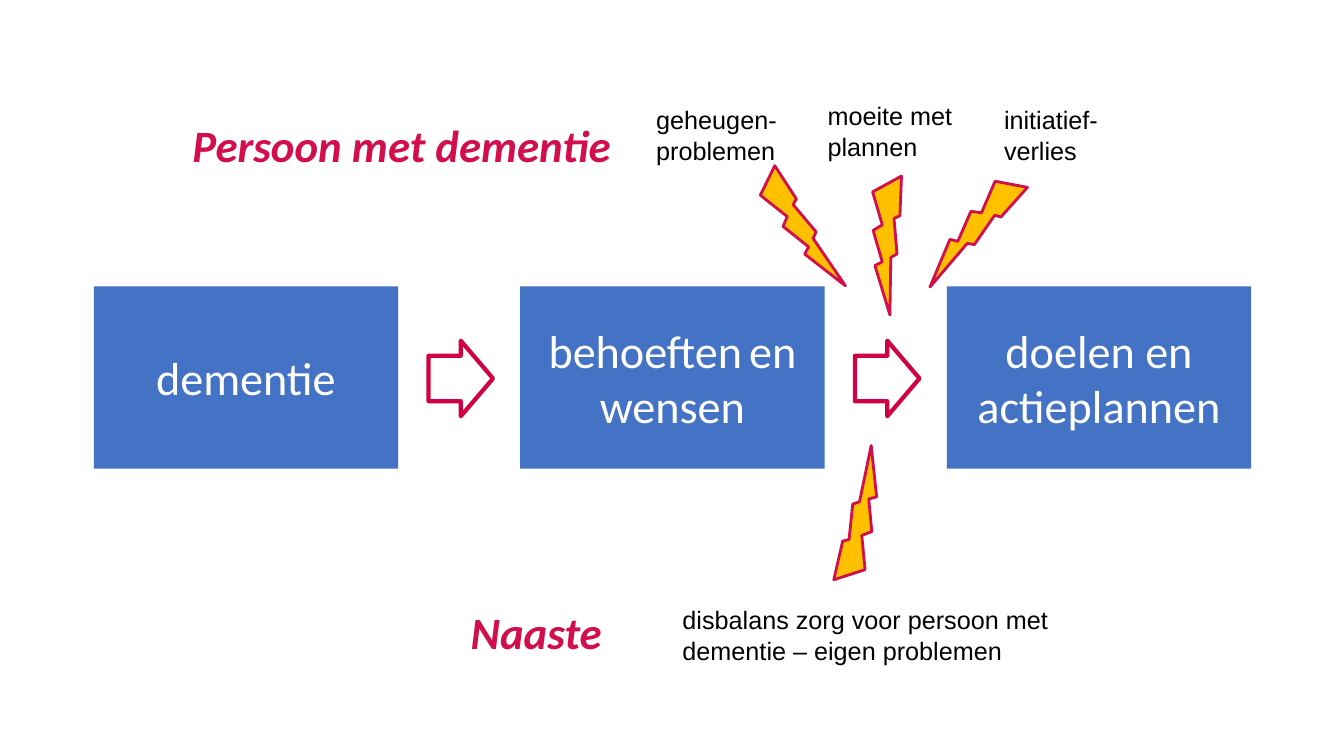
from dataclasses import dataclass

from pptx import Presentation
from pptx.dml.color import RGBColor
from pptx.enum.shapes import MSO_SHAPE
from pptx.enum.text import MSO_ANCHOR, MSO_AUTO_SIZE, PP_ALIGN
from pptx.util import Inches, Pt

RECT, ARROW, BOLT = MSO_SHAPE.RECTANGLE, MSO_SHAPE.RIGHT_ARROW, MSO_SHAPE.LIGHTNING_BOLT
MIDDLE, CENTER, GROW = MSO_ANCHOR.MIDDLE, PP_ALIGN.CENTER, MSO_AUTO_SIZE.SHAPE_TO_FIT_TEXT


@dataclass
class Theme:
    blue: str = "4472C4"
    white: str = "FFFFFF"
    black: str = "000000"
    amber: str = "FFC000"
    red: str = "D00243"
    pink: str = "D20E4C"
    step: int = 33
    head: int = 32
    note: int = 18


theme = Theme()
STEP = {"name": "Calibri", "size": Pt(theme.step)}
SPACE = {"name": "Arial", "size": Pt(theme.note)}
NOTE = {"name": "Arial", "size": Pt(theme.note)}
HEAD = {"name": "Calibri", "size": Pt(theme.head), "bold": True, "italic": True}


def add_run(para, text, style, color):
    run = para.add_run()
    run.text = text
    for key, value in style.items():
        setattr(run.font, key, value)
    run.font.color.rgb = RGBColor.from_string(color)


def add_form(shapes, kind, place, fill, line=None, width=0):
    form = shapes.add_shape(kind, *[Inches(v) for v in place])
    form.shadow.inherit = False
    form.fill.solid()
    form.fill.fore_color.rgb = RGBColor.from_string(fill)
    if line:
        form.line.color.rgb = RGBColor.from_string(line)
        form.line.width = Pt(width)
    else:
        form.line.fill.background()
    return form


deck = Presentation()
deck.slide_width, deck.slide_height = Inches(13.33), Inches(7.5)
slide = deck.slides.add_slide(deck.slide_layouts[6])

# Process: three steps at an equal pitch, with arrows between them
LEFT, PITCH, GAP = 0.93, 4.23, 3.32
steps = [["dementie"], ["behoeften", " ", "en", " ", "wensen"], ["doelen en actieplannen"]]
flow = slide.shapes.add_group_shape().shapes
for i, words in enumerate(steps):
    x = LEFT + i * PITCH
    if i:
        arrow = add_form(flow, ARROW, (x - PITCH + GAP, 3.38, 0.64, 0.75),
                         theme.white, theme.red, 3)
        arrow.adjustments[0], arrow.adjustments[1] = 0.6, 0.5
    box = add_form(flow, RECT, (x, 2.84, 3.02, 1.81), theme.blue)
    frame = box.text_frame
    frame.word_wrap = True
    frame.vertical_anchor = MIDDLE
    for side in ("left", "top", "right", "bottom"):
        setattr(frame, f"margin_{side}", Inches(0.14))
    para = frame.paragraphs[0]
    para.alignment = CENTER
    for word in words:
        add_run(para, word, STEP if word.strip() else SPACE, theme.white)

# Lightning bolts aimed at the second arrow
for x, y, turn in [(7.65, 1.6, 343.8), (8.5, 1.73, 19), (9.37, 1.59, 58.6), (8.27, 4.47, 209.8)]:
    bolt = add_form(slide.shapes, BOLT, (x, y, 0.56, 1.34), theme.amber, theme.pink, 2)
    bolt.rotation = turn

# Headings and notes
labels = [
    ((1.81, 1.12, 4.39, 0.64), ["Persoon met dementie"], HEAD, theme.pink),
    ((6.41, 0.99, 1.4, 0.71), ["geheugen-", "problemen"], NOTE, theme.black),
    ((8.11, 0.95, 1.72, 0.71), ["moeite met plannen"], NOTE, theme.black),
    ((9.86, 0.99, 1.4, 0.71), ["initiatief-verlies"], NOTE, theme.black),
    ((4.57, 5.95, 1.63, 0.64), ["Naaste"], HEAD, theme.pink),
    ((6.67, 5.95, 3.89, 0.71), ["disbalans zorg voor persoon met dementie – eigen problemen"],
     NOTE, theme.black),
]
for place, lines, style, color in labels:
    frame = slide.shapes.add_textbox(*[Inches(v) for v in place]).text_frame
    frame.word_wrap = True
    frame.auto_size = GROW
    for n, line in enumerate(lines):
        para = frame.add_paragraph() if n else frame.paragraphs[0]
        add_run(para, line, style, color)

deck.save("out.pptx")
